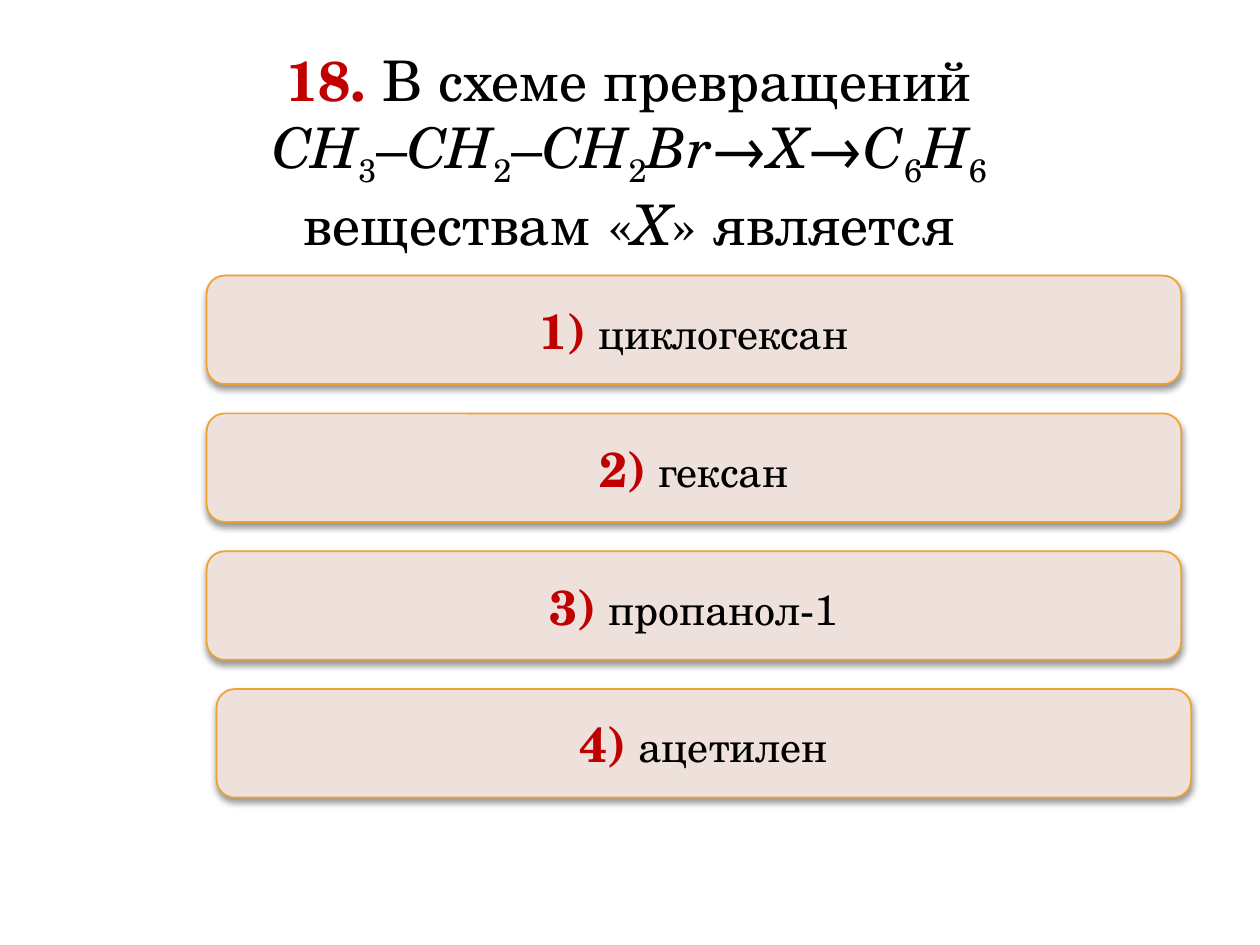
from lxml.etree import SubElement
from pptx import Presentation
from pptx.dml.color import RGBColor
from pptx.enum.shapes import MSO_SHAPE
from pptx.enum.text import MSO_ANCHOR, MSO_AUTO_SIZE, PP_ALIGN
from pptx.oxml.ns import qn
from pptx.util import Pt

FONT = "TeX Gyre Schola"
COLORS = {"number": "C00000", "text": "000000", "answer": "EEE0DB",
          "border": "F0A22E", "shadow": "000000"}
FORMULA = [("CH", "italic"), ("3", "sub"), ("–", ""),
           ("CH", "italic"), ("2", "sub"), ("–", ""),
           ("CH", "italic"), ("2", "sub"), ("Br", "italic"), ("→", ""),
           ("X", "italic"), ("→", ""),
           ("C", "italic"), ("6", "sub"), ("H", "italic"), ("6", "sub")]
CONCLUSION = [("веществам\u00a0«", ""), ("X", "italic"), ("»\u00a0является", "")]
ANSWERS = ["циклогексан", "гексан", "пропанол-1", "ацетилен"]
ANSWER_LEFTS = [118.1, 118.1, 118.1, 123.8]
ANSWER_TOP, ANSWER_STEP = 157.5, 78.75


def color(name):
    return RGBColor.from_string(COLORS[name])


def add_run(paragraph, text, size, style=""):
    run = paragraph.add_run()
    run.text = text
    font = run.font
    font.name, font.size = FONT, Pt(size)
    font.bold = style == "number"
    font.italic = style == "italic"
    font.color.rgb = color("number" if style == "number" else "text")
    if style == "sub":
        run._r.get_or_add_rPr().set("baseline", "-25000")


def add_line_break(paragraph, size):
    paragraph.add_line_break()
    SubElement(paragraph._p[-1], qn("a:rPr"), sz=str(size * 100))


def add_shadow(shape):
    shape.shadow.inherit = False
    effects = shape._element.spPr.find(qn("a:effectLst"))
    shadow = SubElement(effects, qn("a:outerShdw"), blurRad=str(Pt(4)),
                        dist=str(Pt(2)), dir="5400000", rotWithShape="0")
    shade = SubElement(shadow, qn("a:srgbClr"), val=COLORS["shadow"])
    SubElement(shade, qn("a:alpha"), val="40000")


def fill_question(title):
    title.left, title.top, title.width, title.height = Pt(31), Pt(22.3), Pt(657.4), Pt(123.8)
    frame = title.text_frame
    frame.word_wrap = True
    frame.auto_size = MSO_AUTO_SIZE.SHAPE_TO_FIT_TEXT
    frame.vertical_anchor = MSO_ANCHOR.TOP
    question, conclusion = frame.paragraphs[0], frame.add_paragraph()
    question.alignment = conclusion.alignment = PP_ALIGN.CENTER
    add_run(question, "18.", 32, "number")
    add_run(question, " В схеме превращений", 32)
    add_line_break(question, 32)
    for paragraph, runs in ((question, FORMULA), (conclusion, CONCLUSION)):
        for text, style in runs:
            add_run(paragraph, text, 32, style)


def add_answer(slide, number, text, left, top):
    shape = slide.shapes.add_shape(MSO_SHAPE.ROUNDED_RECTANGLE,
                                   Pt(left), Pt(top), Pt(556.9), Pt(62))
    shape.fill.solid()
    shape.fill.fore_color.rgb = color("answer")
    shape.line.color.rgb = color("border")
    shape.line.width = Pt(1)
    add_shadow(shape)
    shape.text_frame.vertical_anchor = MSO_ANCHOR.MIDDLE
    paragraph = shape.text_frame.paragraphs[0]
    paragraph.alignment = PP_ALIGN.CENTER
    add_run(paragraph, f"{number})", 28, "number")
    add_run(paragraph, f" {text}", 24)


def main():
    presentation = Presentation()
    presentation.slide_width, presentation.slide_height = Pt(720), Pt(540)
    slide = presentation.slides.add_slide(presentation.slide_layouts[5])
    fill_question(slide.shapes.title)
    for index, (text, left) in enumerate(zip(ANSWERS, ANSWER_LEFTS)):
        add_answer(slide, index + 1, text, left, ANSWER_TOP + index * ANSWER_STEP)
    presentation.save("out.pptx")


if __name__ == "__main__":
    main()
